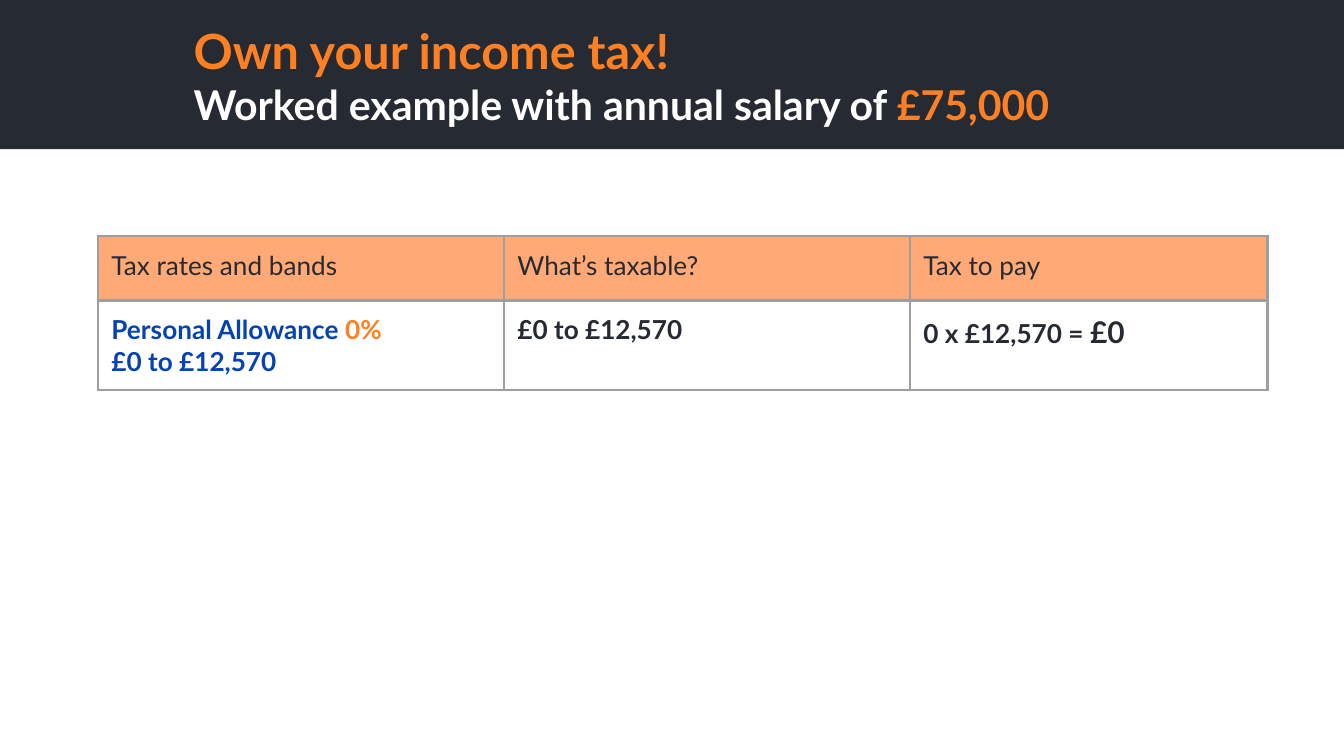
from lxml import etree
from pptx import Presentation
from pptx.dml.color import RGBColor
from pptx.enum.shapes import MSO_SHAPE
from pptx.enum.text import MSO_ANCHOR, MSO_AUTO_SIZE, PP_ALIGN
from pptx.oxml.ns import qn
from pptx.util import Pt

RECTANGLE = MSO_SHAPE.RECTANGLE
MIDDLE, TOP = MSO_ANCHOR.MIDDLE, MSO_ANCHOR.TOP
NO_AUTOFIT = MSO_AUTO_SIZE.NONE
LEFT = PP_ALIGN.LEFT

DARK = RGBColor(0x26, 0x2A, 0x33)
ORANGE = RGBColor(0xFF, 0x80, 0x22)
PEACH = RGBColor(0xFF, 0xA9, 0x76)
BLUE = RGBColor(0x05, 0x43, 0xB3)
GREY = RGBColor(0x9E, 0x9E, 0x9E)
WHITE = RGBColor(0xFF, 0xFF, 0xFF)

FONT = "Lato"
INSET = Pt(7.2)
COLUMN_WIDTHS = (217.5, 217.5, 191.5)
ROW_HEIGHTS = (34.5, 46)

# Each cell holds paragraphs, each paragraph holds (text, size, colour) spans
HEADINGS = [[[(text, 14, DARK)]] for text in
            ("Tax rates and bands", "What’s taxable?", "Tax to pay")]
ALLOWANCE = [
    [[("Personal Allowance ", 14, BLUE), ("0%", 14, ORANGE)],
     [("£0 to £12,570", 14, BLUE)]],
    [[("£0 to £12,570", 14, DARK)]],
    [[("0 x £12,570 = ", 14, DARK), ("£0", 16, DARK)]],
]


def write(frame, paragraphs, bold):
    """Fill a text frame with paragraphs of coloured spans."""
    for index, spans in enumerate(paragraphs):
        para = frame.add_paragraph() if index else frame.paragraphs[0]
        para.alignment = LEFT
        para.font.name = FONT
        para.font.bold = bold
        for text, size, colour in spans:
            span = para.add_run()
            span.text = text
            span.font.name = FONT
            span.font.bold = bold
            span.font.size = Pt(size)
            span.font.color.rgb = colour


def set_margins(item):
    item.margin_left = item.margin_right = INSET
    item.margin_top = item.margin_bottom = INSET


def set_borders(cell):
    properties = cell._tc.get_or_add_tcPr()
    for index, side in enumerate(("lnL", "lnR", "lnT", "lnB")):
        line = etree.Element(qn(f"a:{side}"), w=str(Pt(1.5)))
        fill = etree.SubElement(line, qn("a:solidFill"))
        etree.SubElement(fill, qn("a:srgbClr"), val=str(GREY))
        properties.insert(index, line)


def add_header(page, left, top, width, height):
    # Dark band, placed behind the title
    band = page.shapes.add_shape(RECTANGLE, left, top, width, height)
    band.shadow.inherit = False
    band.fill.solid()
    band.fill.fore_color.rgb = DARK
    band.line.fill.background()

    title = page.shapes.title
    title._element.addprevious(band._element)
    title.left, title.top = left + Pt(96.5), top + Pt(20)
    title.width, title.height = Pt(497), Pt(40.5)
    frame = title.text_frame
    frame.auto_size = NO_AUTOFIT
    frame.word_wrap = True
    frame.vertical_anchor = MIDDLE
    set_margins(frame)
    write(frame, [
        [("Own your income tax!", 26, ORANGE)],
        [("Worked example with annual salary of ", 22, WHITE),
         ("£75,000", 22, ORANGE)],
    ], bold=True)


def add_tax_table(page, left, top):
    rows = (HEADINGS, ALLOWANCE)
    table = page.shapes.add_table(
        len(rows), len(COLUMN_WIDTHS), left, top,
        Pt(sum(COLUMN_WIDTHS)), Pt(sum(ROW_HEIGHTS))).table
    table.horz_banding = False
    for column, width in zip(table.columns, COLUMN_WIDTHS):
        column.width = Pt(width)
    for row, height in zip(table.rows, ROW_HEIGHTS):
        row.height = Pt(height)

    for row_index, contents in enumerate(rows):
        is_heading = row_index == 0
        for column_index, paragraphs in enumerate(contents):
            cell = table.cell(row_index, column_index)
            set_margins(cell)
            cell.vertical_anchor = TOP
            set_borders(cell)
            if is_heading:
                cell.fill.solid()
                cell.fill.fore_color.rgb = PEACH
            else:
                cell.fill.background()
            write(cell.text_frame, paragraphs, bold=not is_heading)


def main():
    deck = Presentation()
    deck.slide_width, deck.slide_height = Pt(720), Pt(405)
    page = deck.slides.add_slide(deck.slide_layouts[5])
    add_header(page, Pt(0), Pt(0), deck.slide_width, Pt(80))
    add_tax_table(page, Pt(52.5), Pt(126.5))
    deck.save("out.pptx")


if __name__ == "__main__":
    main()
